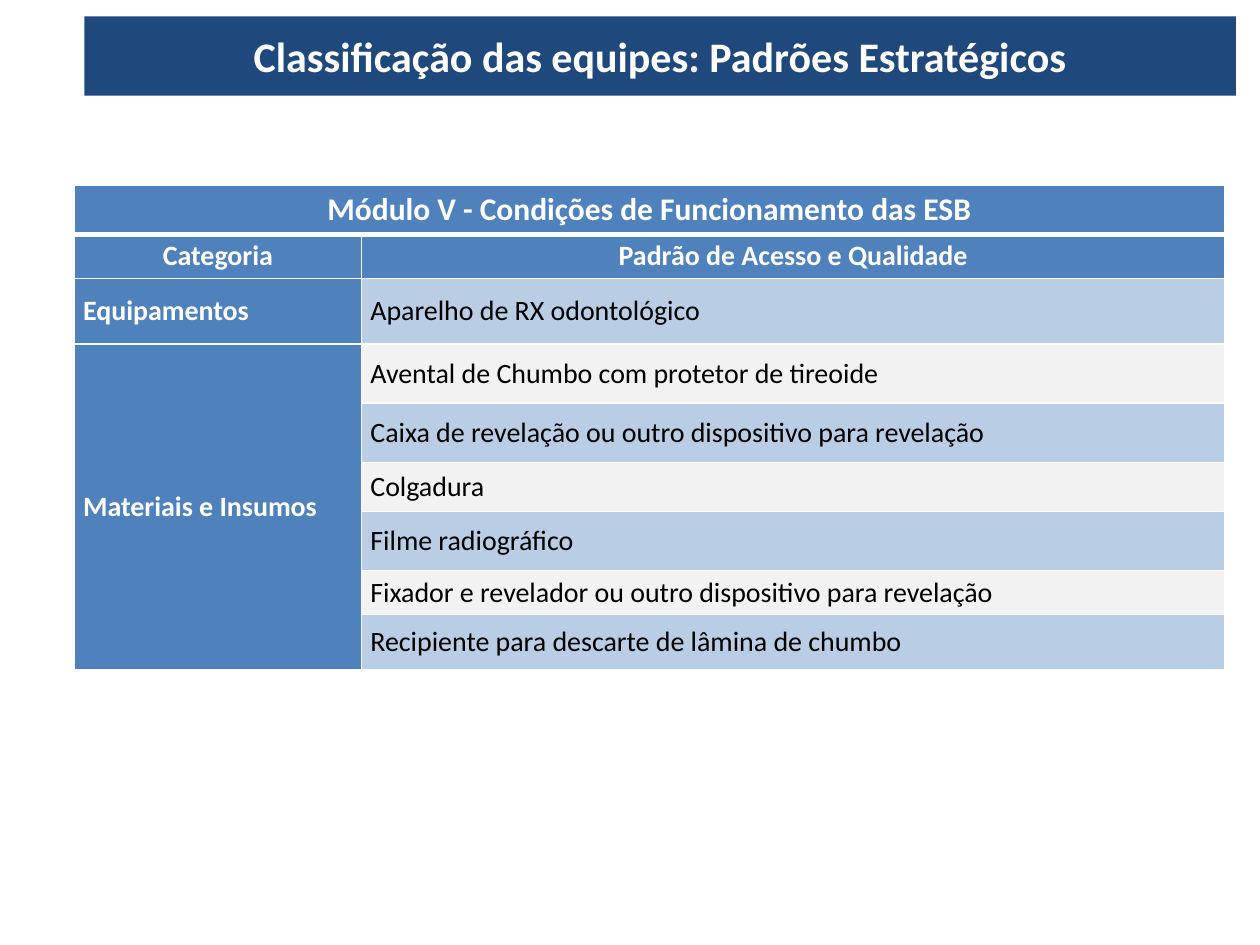
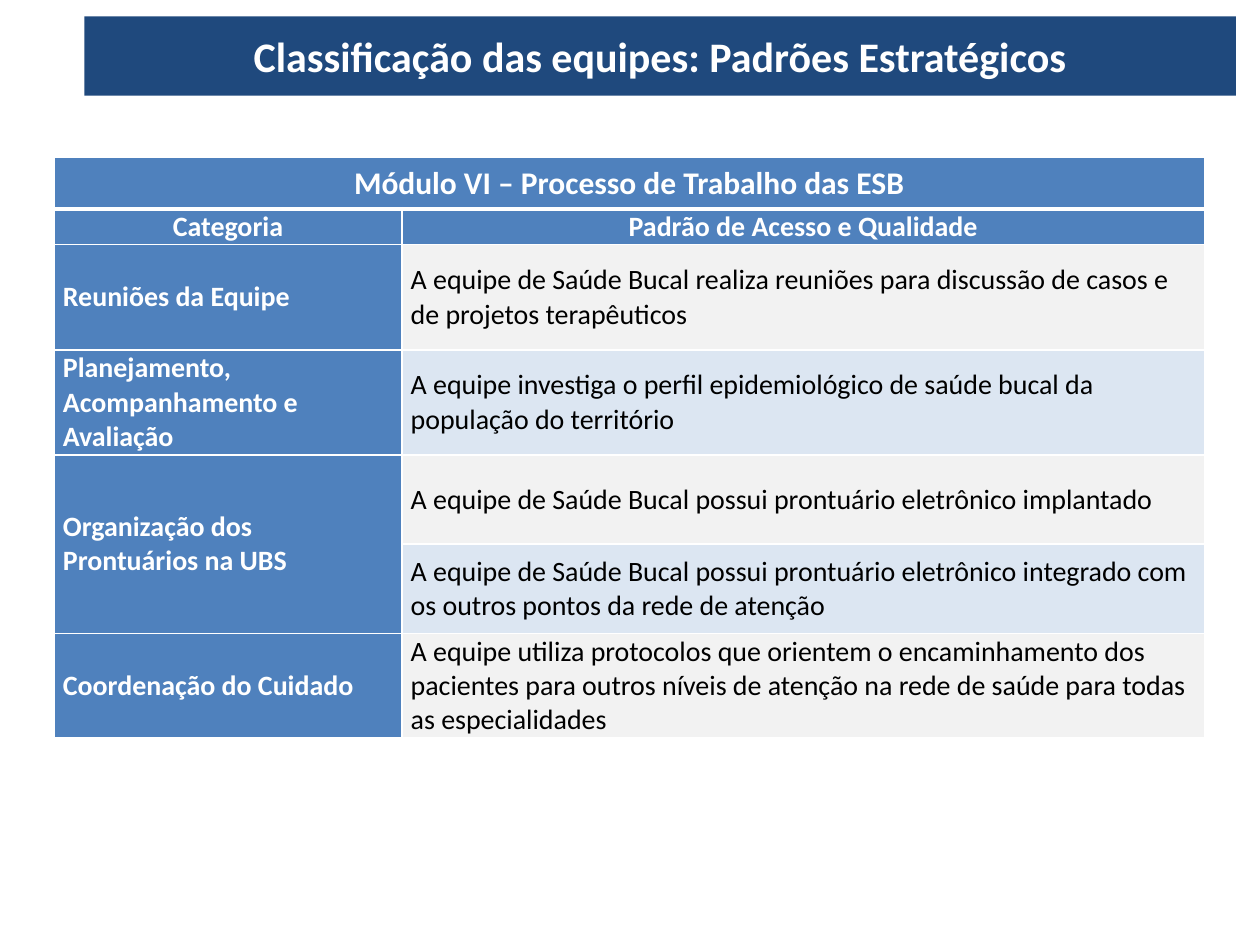
import pptx
import pptx.util
import pptx.dml.color
import pptx.enum.shapes
import pptx.enum.text
import pptx.oxml
import pptx.oxml.ns

Inches, Pt = pptx.util.Inches, pptx.util.Pt
RGBColor = pptx.dml.color.RGBColor
ALIGN = pptx.enum.text.PP_ALIGN
MIDDLE = pptx.enum.text.MSO_ANCHOR.MIDDLE

NAVY = RGBColor(0x1F, 0x49, 0x7D)
BLUE = RGBColor(0x4F, 0x81, 0xBD)
LIGHT_BLUE = RGBColor(0xB9, 0xCD, 0xE5)
PALE_BLUE = RGBColor(0xDC, 0xE6, 0xF2)
LIGHT_GREY = RGBColor(0xF2, 0xF2, 0xF2)
WHITE = RGBColor(0xFF, 0xFF, 0xFF)
BLACK = RGBColor(0, 0, 0)

FONT = "Calibri"
TITLE = "Classificação das equipes: Padrões Estratégicos"
TITLE_BOX = (0.67, 0.13, 9.14, 0.63)
COLUMN_HEADS = ("Categoria", "Padrão de Acesso e Qualidade")

# Each module: categories with the standards that belong to them
MODULES = [
    dict(
        heading="Módulo V - Condições de Funcionamento das ESB",
        corner=(0.59, 1.47),
        widths=(2.28, 6.85),
        heights=(0.39, 0.35, 0.52, 0.47, 0.47, 0.39, 0.47, 0.35, 0.44),
        bands=(LIGHT_BLUE, LIGHT_GREY),
        categories=[
            ("Equipamentos", ["Aparelho de RX odontológico"]),
            ("Materiais e Insumos", [
                "Avental de Chumbo com protetor de tireoide",
                "Caixa de revelação ou outro dispositivo para revelação",
                "Colgadura",
                "Filme radiográfico",
                "Fixador e revelador ou outro dispositivo para revelação",
                "Recipiente para descarte de lâmina de chumbo",
            ]),
        ],
    ),
    dict(
        heading="Módulo VI – Processo de Trabalho das ESB",
        corner=(0.43, 1.25),
        widths=(2.76, 6.37),
        heights=(0.41, 0.28, 0.84, 0.83, 0.71, 0.71, 0.83),
        bands=(LIGHT_GREY, PALE_BLUE),
        categories=[
            ("Reuniões da Equipe", [
                "A equipe de Saúde Bucal realiza reuniões para discussão de "
                "casos e de projetos terapêuticos"]),
            ("Planejamento, Acompanhamento e Avaliação", [
                "A equipe investiga o perfil epidemiológico de saúde bucal "
                "da população do território"]),
            ("Organização dos Prontuários na UBS", [
                "A equipe de Saúde Bucal possui prontuário eletrônico implantado",
                "A equipe de Saúde Bucal possui prontuário eletrônico integrado "
                "com os outros pontos da rede de atenção"]),
            ("Coordenação do Cuidado", [
                "A equipe utiliza protocolos que orientem o encaminhamento dos "
                "pacientes para outros níveis de atenção na rede de saúde para "
                "todas as especialidades"]),
        ],
    ),
]


def write(frame, text, size, color=WHITE, bold=True, align=ALIGN.CENTER):
    paragraph = frame.paragraphs[0]
    paragraph.alignment = align
    run = paragraph.add_run()
    run.text = text
    run.font.name = FONT
    run.font.size = Pt(size)
    run.font.bold = bold
    run.font.color.rgb = color


def add_title_band(slide, box):
    band = slide.shapes.add_shape(
        pptx.enum.shapes.MSO_SHAPE.RECTANGLE, *map(Inches, box))
    band.shadow.inherit = False
    band.fill.solid()
    band.fill.fore_color.rgb = NAVY
    band.line.fill.background()
    band.text_frame.word_wrap = True
    band.text_frame.vertical_anchor = MIDDLE
    write(band.text_frame, TITLE, 24)


def set_borders(cell, top, bottom):
    properties = cell._tc.get_or_add_tcPr()
    for side, points in (("L", 1), ("R", 1), ("T", top), ("B", bottom)):
        properties.append(pptx.oxml.parse_xml(
            f'<a:ln{side} {pptx.oxml.ns.nsdecls("a")} w="{Pt(points)}">'
            f'<a:solidFill><a:srgbClr val="{WHITE}"/></a:solidFill>'
            f'</a:ln{side}>'))


def style_cell(cell, row, fill):
    # A thick rule separates the module heading from the column heads
    set_borders(cell, top=3 if row == 1 else 1, bottom=3 if row == 0 else 1)
    cell.fill.solid()
    cell.fill.fore_color.rgb = fill
    cell.margin_left = cell.margin_right = Inches(0.07)
    cell.margin_top = cell.margin_bottom = 0
    cell.vertical_anchor = MIDDLE


def add_module_table(slide, heading, corner, widths, heights, bands, categories):
    table = slide.shapes.add_table(
        len(heights), len(widths), *map(Inches, corner),
        Inches(sum(widths)), Inches(sum(heights))).table
    table.horz_banding = False
    for column, width in zip(table.columns, widths):
        column.width = Inches(width)
    for row, height in enumerate(heights):
        table.rows[row].height = Inches(height)
        style_cell(table.cell(row, 0), row, BLUE)
        style_cell(table.cell(row, 1), row, BLUE if row < 2 else bands[row % 2])

    # Module heading and column heads
    table.cell(0, 0).merge(table.cell(0, 1))
    write(table.cell(0, 0).text_frame, heading, 18)
    for column, head in enumerate(COLUMN_HEADS):
        write(table.cell(1, column).text_frame, head, 16)

    # Categories span the rows of their standards
    row = 2
    for category, standards in categories:
        if len(standards) > 1:
            table.cell(row, 0).merge(table.cell(row + len(standards) - 1, 0))
        write(table.cell(row, 0).text_frame, category, 16, align=ALIGN.LEFT)
        for standard in standards:
            write(table.cell(row, 1).text_frame, standard, 16, BLACK,
                  bold=False, align=ALIGN.LEFT)
            row += 1


def main():
    deck = pptx.Presentation()
    deck.slide_width, deck.slide_height = Inches(10), Inches(7.5)
    for module in MODULES:
        slide = deck.slides.add_slide(deck.slide_layouts[6])
        add_title_band(slide, TITLE_BOX)
        add_module_table(slide, **module)
    deck.save("out.pptx")


if __name__ == "__main__":
    main()
